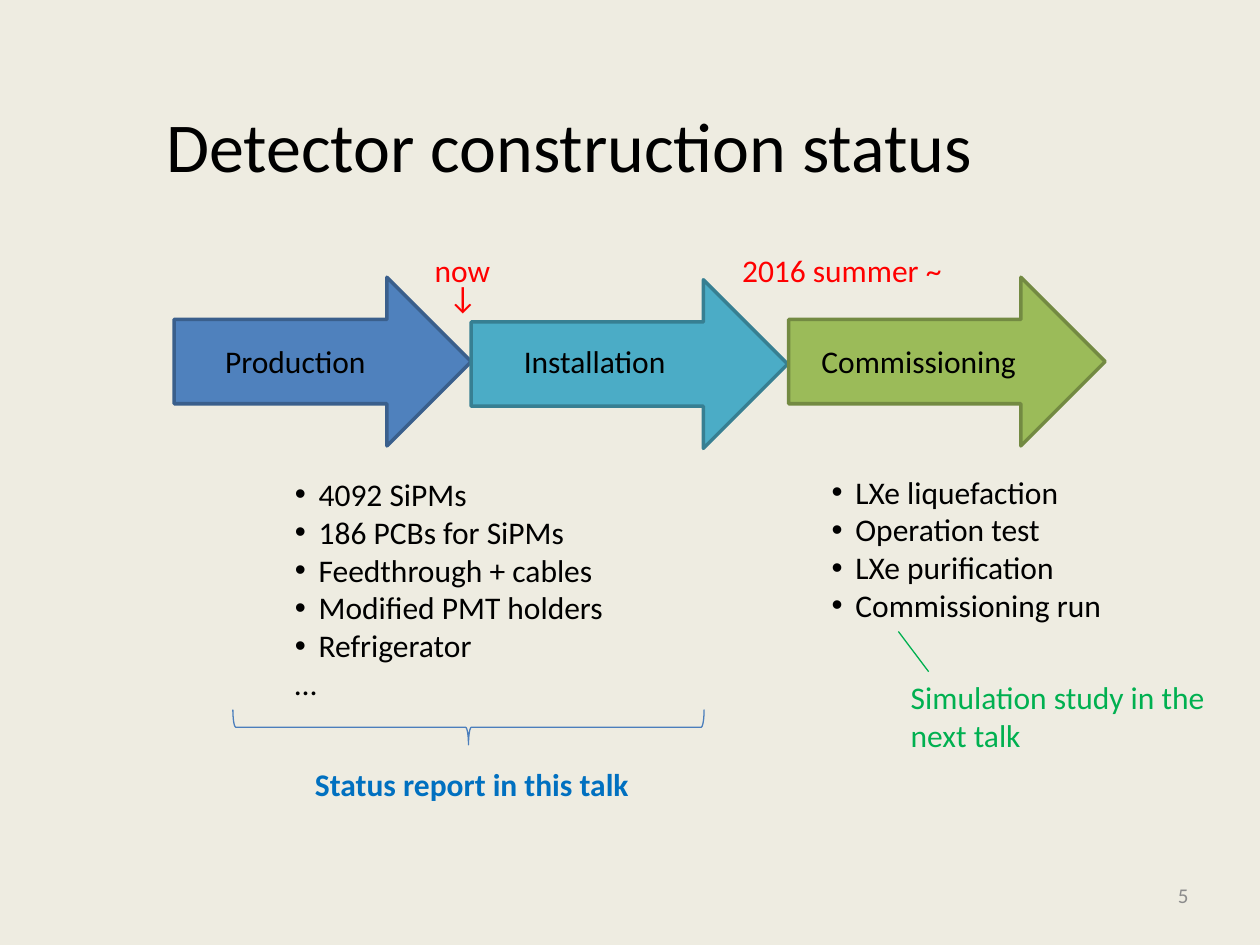
from lxml.etree import SubElement
from pptx import Presentation
from pptx.dml.color import RGBColor
from pptx.enum.shapes import MSO_CONNECTOR as Conn, MSO_SHAPE as Geo
from pptx.enum.text import MSO_ANCHOR as Anchor, MSO_AUTO_SIZE as Fit, PP_ALIGN as Align
from pptx.oxml.ns import qn
from pptx.util import Cm, Pt

BLACK = RGBColor(0x00, 0x00, 0x00)
RED = RGBColor(0xFF, 0x00, 0x00)
BLUE = RGBColor(0x00, 0x70, 0xC0)
GREEN = RGBColor(0x00, 0xB0, 0x50)
GREY = RGBColor(0x8C, 0x8C, 0x8C)
CREAM = RGBColor(0xEE, 0xEC, 0xE1)
BRACE = RGBColor(0x4B, 0x7E, 0xBC)
NAVY = RGBColor(0x4F, 0x81, 0xBD)
NAVY_EDGE = RGBColor(0x3A, 0x5F, 0x8C)
TEAL = RGBColor(0x4B, 0xAC, 0xC6)
TEAL_EDGE = RGBColor(0x37, 0x7F, 0x92)
LIME = RGBColor(0x9B, 0xBB, 0x59)
LIME_EDGE = RGBColor(0x73, 0x8A, 0x42)

STAGES = [
    ("Production", (3.51, 5.59, 5.99, 3.4), (4.29, 3.81), NAVY, NAVY_EDGE),
    ("Installation", (9.5, 5.64, 6.38, 3.4), (10.31, 4.19), TEAL, TEAL_EDGE),
    ("Commissioning", (15.9, 5.59, 6.38, 3.4), (16.31, 4.83), LIME, LIME_EDGE),
]
PARTS = ["4092 SiPMs", "186 PCBs for SiPMs", "Feedthrough + cables",
         "Modified PMT holders", "Refrigerator", "…"]
TESTS = ["LXe liquefaction", "Operation test", "LXe purification", "Commissioning run"]
ROW = 1.02
INDENT = Cm(0.48)


def apply(target, values):
    for name, value in values.items():
        setattr(target, name, value)


def style(run, color=BLACK, size=18, bold=False):
    apply(run.font, {"name": "Calibri", "size": Pt(size), "bold": bold})
    run.font.color.rgb = color


def place(shape, box):
    names = ("left", "top", "width", "height")
    apply(shape, dict(zip(names, map(Cm, box))))


def write(para, text, **look):
    run = para.add_run()
    run.text = text
    style(run, **look)


def add_label(slide, text, box, align=Align.LEFT, anchor=Anchor.TOP, turn=0, **look):
    label = slide.shapes.add_textbox(*map(Cm, box))
    label.rotation = turn
    frame = label.text_frame
    apply(frame, {"word_wrap": True, "vertical_anchor": anchor})
    para = frame.paragraphs[0]
    para.alignment = align
    write(para, text, **look)


def add_outline(slide, geo, box, edge, width, fill=None, turn=0):
    shape = slide.shapes.add_shape(geo, *map(Cm, box))
    shape.rotation = turn
    shape.shadow.inherit = False
    if fill is None:
        shape.fill.background()
    else:
        shape.fill.solid()
        shape.fill.fore_color.rgb = fill
    shape.line.color.rgb = edge
    shape.line.width = Pt(width)


def set_title(title, text, box):
    place(title, box)
    frame = title.text_frame
    apply(frame, {"vertical_anchor": Anchor.MIDDLE, "auto_size": Fit.NONE})
    para = frame.paragraphs[0]
    para.alignment = Align.LEFT
    write(para, text, size=40)


def set_bullet(para, shown):
    props = para._p.get_or_add_pPr()
    props.set("marL", str(INDENT if shown else 0))
    props.set("indent", str(-INDENT if shown else 0))
    if shown:
        SubElement(props, qn("a:buFont"), typeface="Arial")
        SubElement(props, qn("a:buChar"), char="•")
    else:
        SubElement(props, qn("a:buNone"))


def set_list(body, items, box):
    place(body, box)
    frame = body.text_frame
    apply(frame, {"vertical_anchor": Anchor.TOP, "auto_size": Fit.NONE, "word_wrap": True})
    for num, item in enumerate(items):
        para = frame.add_paragraph() if num else frame.paragraphs[0]
        set_bullet(para, item != "…")
        para.space_before = Pt(0)
        write(para, item)


def add_line(slide, ends, color, width):
    line = slide.shapes.add_connector(Conn.STRAIGHT, *map(Cm, ends))
    line.line.color.rgb = color
    line.line.width = Pt(width)
    SubElement(line._element.spPr, qn("a:effectLst"))


def main():
    deck = Presentation()
    apply(deck, {"slide_width": Cm(25.4), "slide_height": Cm(19.05)})
    slide = deck.slides.add_slide(deck.slide_layouts[3])
    slide.background.fill.solid()
    slide.background.fill.fore_color.rgb = CREAM

    title, left, right = slide.placeholders
    set_title(title, "Detector construction status", (3.1, 1.32, 19.99, 3.18))
    set_list(left, PARTS, (5.69, 9.45, 7.19, 4.88))
    set_list(right, TESTS, (16.51, 9.4, 7.19, 3.33))

    for _, box, _, fill, edge in STAGES:
        add_outline(slide, Geo.RIGHT_ARROW, box, edge, 2, fill)
    for name, _, (x, width), _, _ in STAGES:
        add_label(slide, name, (x, 6.78, width, ROW))

    add_label(slide, "now", (8.51, 4.93, 3.4, ROW), color=RED)
    add_label(slide, "→", (8.59, 5.82, 1.6, ROW), turn=90, color=RED)
    add_label(slide, "2016 summer ~", (14.71, 4.93, 5, ROW), color=RED)

    add_outline(slide, Geo.LEFT_BRACE, (9.09, 9.91, 0.71, 9.5), BRACE, 0.75, turn=270)
    add_label(slide, "Status report in this talk", (6.1, 15.29, 7.8, ROW),
              color=BLUE, bold=True)
    add_label(slide, "Simulation study in the next talk", (18.11, 13.54, 6.91, 1.8),
              color=GREEN)
    add_line(slide, (18.72, 13.54, 18.11, 12.73), GREEN, 0.75)
    add_label(slide, "5", (18.29, 17.53, 5.92, ROW), Align.RIGHT, Anchor.MIDDLE,
              color=GREY, size=12)
    deck.save("out.pptx")


if __name__ == "__main__":
    main()
